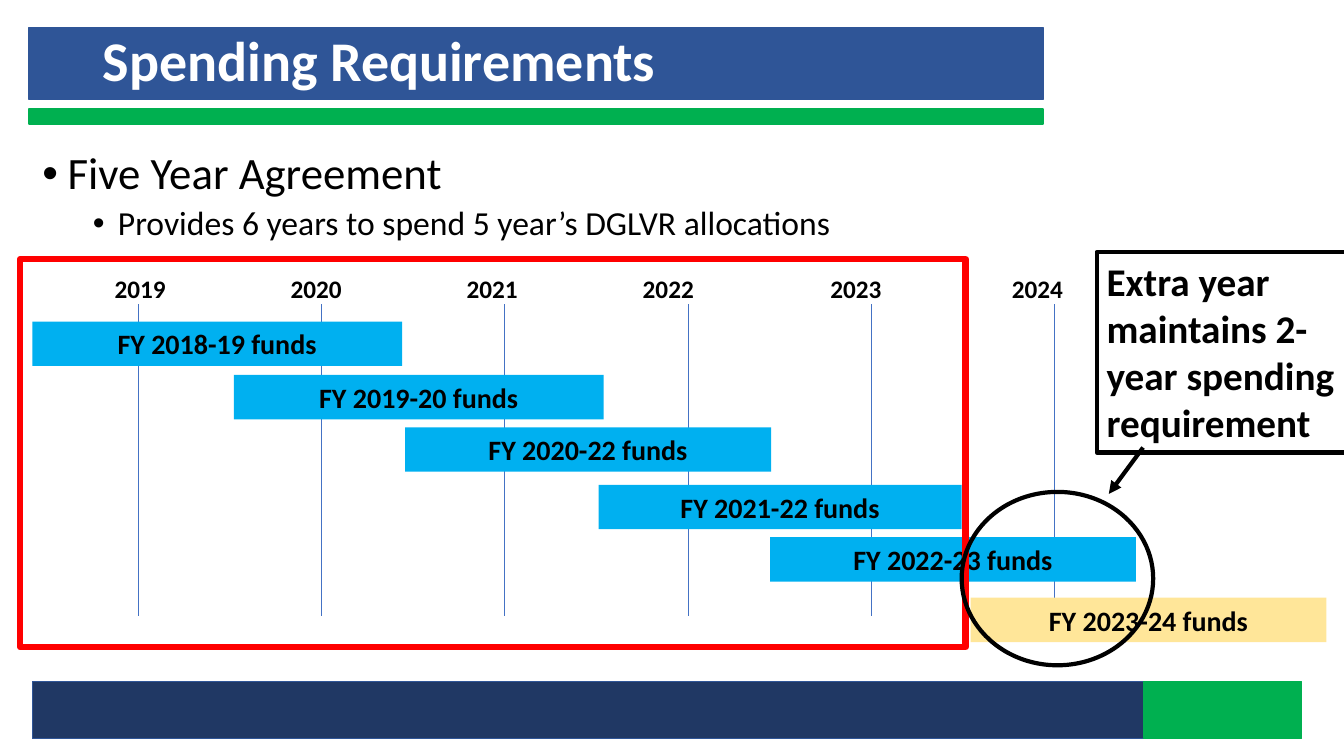
from dataclasses import dataclass

from lxml.etree import SubElement
from pptx import Presentation
from pptx.dml.color import RGBColor
from pptx.enum.shapes import MSO_CONNECTOR, MSO_SHAPE
from pptx.enum.text import MSO_ANCHOR, MSO_AUTO_SIZE, PP_ALIGN
from pptx.oxml.ns import qn
from pptx.util import Inches, Pt

COLUMNS, ROWS = 160, 90


@dataclass(frozen=True)
class Theme:
    """Colours, type sizes and line widths of the slide."""

    font: str = "Calibri"
    text: str = "000000"
    inverse: str = "FFFFFF"
    blue: str = "2F5597"
    navy: str = "203864"
    green: str = "00B050"
    grid: str = "4472C4"
    funds: str = "00B0F0"
    extra: str = "FFE699"
    frame: str = "FF0000"
    title_size: int = 40
    body_size: int = 32
    detail_size: int = 24
    callout_size: int = 28
    bar_size: int = 20
    year_size: int = 18
    hairline: float = 0.5
    outline: float = 1
    marker: float = 3
    thick: float = 4.5


class SlideBuilder:
    """Places styled elements on a grid of columns and rows."""

    def __init__(self, presentation, theme):
        """Add the slide and keep the size of a grid cell."""
        self.theme = theme
        self.slide = presentation.slides.add_slide(presentation.slide_layouts[1])
        self.column = presentation.slide_width / COLUMNS
        self.row = presentation.slide_height / ROWS

    def across(self, columns):
        """Convert columns to a length."""
        return round(columns * self.column)

    def down(self, rows):
        """Convert rows to a length."""
        return round(rows * self.row)

    def box(self, left, top, width, height):
        """Convert a grid box to lengths."""
        return self.across(left), self.down(top), self.across(width), self.down(height)

    def place(self, shape, box):
        """Move a placeholder to a grid box."""
        shape.left, shape.top, shape.width, shape.height = self.box(*box)
        shape.text_frame.auto_size = MSO_AUTO_SIZE.NONE

    def styled_run(self, paragraph, text, size, bold=True, color=None):
        """Add one styled run."""
        run = paragraph.add_run()
        run.text = text
        run.font.name = self.theme.font
        run.font.size = Pt(size)
        run.font.bold = bold
        run.font.color.rgb = RGBColor.from_string(color or self.theme.text)

    def title(self, text, box):
        """Fill the title placeholder and bring it to the front."""
        title = self.slide.shapes.title
        self.place(title, box)
        title.text_frame.vertical_anchor = MSO_ANCHOR.MIDDLE
        paragraph = title.text_frame.paragraphs[0]
        paragraph.alignment = PP_ALIGN.LEFT
        paragraph.line_spacing = 0.9
        self.styled_run(paragraph, text, self.theme.title_size, color=self.theme.inverse)
        title.element.getparent().append(title.element)

    def bullets(self, items, box):
        """Fill the body placeholder with bulleted items."""
        body = self.slide.placeholders[1]
        self.place(body, box)
        for index, (text, size, space) in enumerate(items):
            frame = body.text_frame
            paragraph = frame.add_paragraph() if index else frame.paragraphs[0]
            paragraph.level = index
            paragraph.line_spacing = 0.9
            paragraph.space_before = Pt(space)
            properties = paragraph._p.get_or_add_pPr()
            properties.set("marL", str(Inches(0.25 + 0.5 * index)))
            properties.set("indent", str(Inches(-0.25)))
            SubElement(properties, qn("a:buFont"), typeface="Arial")
            SubElement(properties, qn("a:buChar"), char="•")
            self.styled_run(paragraph, text, size, bold=False)

    def shape(self, box, fill=None, line=None, width=1, kind=MSO_SHAPE.RECTANGLE):
        """Add a preset shape with an optional fill and outline."""
        shape = self.slide.shapes.add_shape(kind, *self.box(*box))
        shape.shadow.inherit = False
        for paint, color in ((shape.fill, fill), (shape.line.fill, line)):
            if color:
                paint.solid()
                paint.fore_color.rgb = RGBColor.from_string(color)
            else:
                paint.background()
        if line:
            shape.line.width = Pt(width)
        return shape

    def label(self, shape, text, size, alignment, anchor):
        """Set bold text inside a shape."""
        frame = shape.text_frame
        frame.word_wrap = True
        frame.vertical_anchor = anchor
        frame.paragraphs[0].alignment = alignment
        self.styled_run(frame.paragraphs[0], text, size)

    def bar(self, text, left, top, width, fill):
        """Add a timeline bar."""
        shape = self.shape((left, top, width, 5.28), fill)
        self.label(shape, text, self.theme.bar_size, PP_ALIGN.CENTER, MSO_ANCHOR.MIDDLE)

    def tabbed_text(self, words, stops, box):
        """Add a row of words aligned on tab stops."""
        frame = self.slide.shapes.add_textbox(*self.box(*box)).text_frame
        frame.word_wrap = True
        paragraph = frame.paragraphs[0]
        tabs = SubElement(paragraph._p.get_or_add_pPr(), qn("a:tabLst"))
        for stop in stops:
            SubElement(tabs, qn("a:tab"), pos=str(self.across(stop)), algn="l")
        self.styled_run(paragraph, "\t".join(words), self.theme.year_size)

    def line(self, start, end, color, width, arrow=False):
        """Add a straight line with an optional arrowhead."""
        points = [self.across(start[0]), self.down(start[1]), self.across(end[0]), self.down(end[1])]
        connector = self.slide.shapes.add_connector(MSO_CONNECTOR.STRAIGHT, *points)
        connector.line.color.rgb = RGBColor.from_string(color)
        connector.line.width = Pt(width)
        properties = connector.element.spPr
        if arrow:
            SubElement(properties.find(qn("a:ln")), qn("a:tailEnd"), type="triangle")
        SubElement(properties, qn("a:effectLst"))


def main():
    """Build and save the spending requirements slide."""
    presentation = Presentation()
    presentation.slide_width, presentation.slide_height = Inches(13.33), Inches(7.5)
    theme = Theme()
    builder = SlideBuilder(presentation, theme)

    for box, fill, line in (
        ((3.48, 3.24, 120.72, 8.64), theme.blue, theme.blue),
        ((3.48, 12.96, 120.72, 1.8), theme.green, theme.green),
        ((3.84, 81.12, 132.36, 6.84), theme.navy, theme.blue),
        ((136.2, 81.12, 18.72, 6.84), theme.green, theme.green),
    ):
        builder.shape(box, fill, line, theme.outline)
    builder.title("Spending Requirements", (11.04, 2.16, 106.08, 10.8))
    builder.bullets(
        (
            ("Five Year Agreement", theme.body_size, 10),
            ("Provides 6 years to spend 5 year’s DGLVR allocations", theme.detail_size, 5),
        ),
        (3.84, 17.4, 117.96, 14.52),
    )

    years = [str(year) for year in range(2019, 2025)]
    builder.tabbed_text(years, (20.94, 41.9, 62.86, 85.2, 106.8), (12.48, 31.92, 120, 4.8))
    for index in range(len(years)):
        column = 16.44 + 21.82 * index
        builder.line((column, 36.24), (column, 73.32), theme.grid, theme.hairline)

    for period, left, top, width in (
        ("2018-19", 3.84, 38.28, 44.04),
        ("2019-20", 27.84, 44.64, 44.04),
        ("2020-22", 48.24, 50.88, 43.56),
        ("2021-22", 71.28, 57.72, 43.2),
        ("2022-23", 91.68, 63.96, 43.56),
    ):
        builder.bar(f"FY {period} funds", left, top, width, theme.funds)
    builder.shape((2.4, 30.84, 112.56, 46.2), line=theme.frame, width=theme.thick)
    builder.bar("FY 2023-24 funds", 115.56, 71.16, 42.36, theme.extra)

    builder.shape((114.48, 58.56, 22.8, 20.64), None, theme.text, theme.marker, MSO_SHAPE.OVAL)
    callout = builder.shape((130.56, 30, 30.12, 23.88), None, theme.text, theme.marker)
    message = "Extra year maintains 2-year spending requirement"
    builder.label(callout, message, theme.callout_size, PP_ALIGN.LEFT, MSO_ANCHOR.TOP)
    builder.line((136.08, 53.28), (132, 58.8), theme.text, theme.marker, arrow=True)
    presentation.save("out.pptx")


if __name__ == "__main__":
    main()
